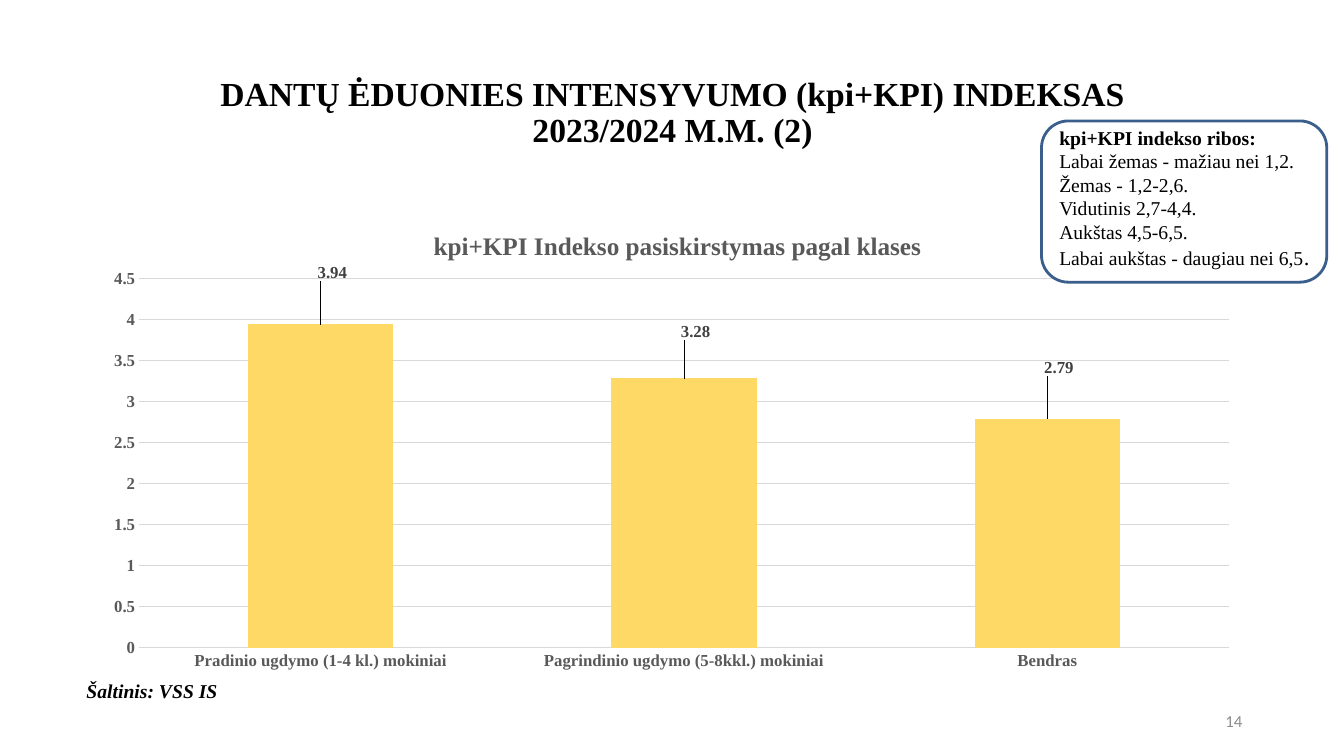
from dataclasses import dataclass

from lxml import etree
from pptx import Presentation
from pptx import slide as s
from pptx import util as u
from pptx.chart import chart as ch
from pptx.chart import data as cd
from pptx.dml.color import RGBColor
from pptx.enum import chart as ce
from pptx.enum import shapes, text
from pptx.oxml.ns import qn
from pptx.text import text as tt


@dataclass(frozen=True)
class Theme:
    serif: str = "Times New Roman"
    sans: str = "Calibri"
    black: str = "000000"
    white: str = "FFFFFF"
    axis: str = "595959"
    label: str = "404040"
    grid: str = "D9D9D9"
    bar: str = "FFD966"
    outline: str = "3A5F8C"
    number: str = "8C8C8C"
    heading_size: int = 24
    chart_title_size: int = 18
    stop_size: int = 16
    body_size: int = 14
    small_size: int = 12


THEME = Theme()


@dataclass(frozen=True)
class Span:
    words: str
    size: int = THEME.body_size
    bold: bool = False
    italic: bool = False
    color: str = THEME.black
    face: str = THEME.serif


@dataclass(frozen=True)
class Box:
    left: float
    top: float
    width: float
    height: float

    def lengths(self) -> list[int]:
        return [u.Inches(n) for n in (self.left, self.top, self.width, self.height)]


@dataclass(frozen=True)
class ClassGroup:
    name: str
    index: float
    label_shift: tuple[float, float]


GROUPS = [
    ClassGroup("Pradinio ugdymo (1-4 kl.) mokiniai", 3.94, (0.01, -0.08)),
    ClassGroup("Pagrindinio ugdymo (5-8kkl.) mokiniai", 3.28, (0.01, -0.07)),
    ClassGroup("Bendras", 2.79, (0.01, -0.08)),
]

LIMITS = [
    [Span("kpi+KPI indekso ribos:", bold=True)],
    [Span("Labai žemas - mažiau nei 1,2.")],
    [Span("Žemas - 1,2-2,6.")],
    [Span("Vidutinis 2,7-4,4.")],
    [Span("Aukštas 4,5-6,5.")],
    [Span("Labai aukštas - daugiau nei 6,5"), Span(".", THEME.stop_size)],
]


def style_font(font: tt.Font, span: Span) -> None:
    font.name, font.size = span.face, u.Pt(span.size)
    font.bold, font.italic = span.bold, span.italic
    font.color.rgb = RGBColor.from_string(span.color)


def write(frame: tt.TextFrame, paras: list[list[Span]], align: text.PP_ALIGN,
          anchor: text.MSO_ANCHOR = text.MSO_ANCHOR.MIDDLE) -> None:
    frame.word_wrap = True
    frame.vertical_anchor = anchor
    for number, spans in enumerate(paras):
        para = frame.add_paragraph() if number else frame.paragraphs[0]
        para.alignment = align
        for span in spans:
            run = para.add_run()
            run.text = span.words
            style_font(run.font, span)


def add_text(page: s.Slide, box: Box, paras: list[list[Span]], align: text.PP_ALIGN,
             anchor: text.MSO_ANCHOR = text.MSO_ANCHOR.MIDDLE) -> tt.TextFrame:
    frame = page.shapes.add_textbox(*box.lengths()).text_frame
    write(frame, paras, align, anchor)
    return frame


def manual_layout(**values: str | float) -> etree._Element:
    """Build a c:layout element; values follow the schema order."""
    layout = etree.Element(qn("c:layout"))
    manual = etree.SubElement(layout, qn("c:manualLayout"))
    for name, value in values.items():
        etree.SubElement(manual, qn(f"c:{name}")).set("val", str(value))
    return layout


def place_plot(chart: ch.Chart) -> None:
    area = chart._chartSpace.chart.plotArea
    for old in area.findall(qn("c:layout")):
        area.remove(old)
    area.insert(0, manual_layout(layoutTarget="inner", xMode="edge", yMode="edge",
                                 x=0.04, y=0.16, w=0.94, h=0.77))


def add_title(chart: ch.Chart) -> None:
    run = chart.chart_title.text_frame.paragraphs[0].add_run()
    run.text = "kpi+KPI Indekso pasiskirstymas pagal klases"
    style_font(run.font, Span("", THEME.chart_title_size, True, color=THEME.axis))
    chart.chart_title.include_in_layout = False
    title = chart._chartSpace.chart.find(qn("c:title"))
    for old in title.findall(qn("c:layout")):
        title.remove(old)
    title.find(qn("c:tx")).addnext(
        manual_layout(xMode="edge", yMode="edge", x=0.29, y=0.05))


def style_axes(chart: ch.Chart) -> None:
    for axis in (chart.category_axis, chart.value_axis):
        axis.major_tick_mark = axis.minor_tick_mark = ce.XL_TICK_MARK.NONE
        axis.format.line.fill.background()
        style_font(axis.tick_labels.font,
                   Span("", THEME.small_size, True, color=THEME.axis))
    scale = chart.value_axis
    scale.minimum_scale, scale.maximum_scale, scale.major_unit = 0, 4.5, 0.5
    scale.has_major_gridlines = True
    grid = scale.major_gridlines.format.line
    grid.width = u.Pt(0.75)
    grid.color.rgb = RGBColor.from_string(THEME.grid)


def style_bars(chart: ch.Chart) -> None:
    plot = chart.plots[0]
    plot.gap_width, plot.vary_by_categories = 150, False
    bars = plot.series[0]
    bars.format.fill.solid()
    bars.format.fill.fore_color.rgb = RGBColor.from_string(THEME.bar)
    look = Span("", THEME.small_size, True, color=THEME.label)
    bars.data_labels.show_value = True
    style_font(bars.data_labels.font, look)
    for number in range(len(GROUPS)):
        label = bars.points[number].data_label
        style_font(label.font, look)
        label.position = ce.XL_LABEL_POSITION.OUTSIDE_END
    for group, node in zip(GROUPS, chart._chartSpace.xpath(".//c:dLbl")):
        x, y = group.label_shift
        node.find(qn("c:idx")).addnext(manual_layout(x=x, y=y))


def add_index_chart(page: s.Slide, box: Box) -> None:
    data = cd.CategoryChartData()
    data.categories = [group.name for group in GROUPS]
    data.add_series("Series 1", [group.index for group in GROUPS])
    chart = page.shapes.add_chart(
        ce.XL_CHART_TYPE.COLUMN_CLUSTERED, *box.lengths(), data).chart
    chart.has_legend = False
    style_font(chart.font, Span("", 10, face=THEME.sans))
    add_title(chart)
    style_axes(chart)
    style_bars(chart)
    place_plot(chart)


def add_limits(page: s.Slide, box: Box) -> None:
    card = page.shapes.add_shape(shapes.MSO_SHAPE.ROUNDED_RECTANGLE, *box.lengths())
    card.shadow.inherit = False
    card.fill.solid()
    card.fill.fore_color.rgb = RGBColor.from_string(THEME.white)
    card.line.color.rgb = RGBColor.from_string(THEME.outline)
    card.line.width = u.Pt(2)
    card.text_frame.margin_right = u.Inches(0.05)
    card.text_frame.margin_bottom = u.Inches(0.12)
    write(card.text_frame, LIMITS, text.PP_ALIGN.LEFT)


def main() -> None:
    deck = Presentation()
    deck.slide_width, deck.slide_height = u.Inches(13.33), u.Inches(7.5)
    page = deck.slides.add_slide(deck.slide_layouts[6])
    heading = [[Span(words, THEME.heading_size, True)] for words in (
        "DANTŲ ĖDUONIES INTENSYVUMO (kpi+KPI) INDEKSAS", "2023/2024 M.M. (2)")]
    frame = add_text(page, Box(0.92, 0.4, 11.5, 1.45), heading, text.PP_ALIGN.CENTER)
    for para in frame.paragraphs:
        para.line_spacing = 0.9
    add_index_chart(page, Box(0.92, 2, 11.5, 4.76))
    add_limits(page, Box(10.33, 1.2, 2.83, 1.6))
    add_text(page, Box(0.76, 6.69, 1.6, 0.34),
             [[Span("Šaltinis: VSS IS", bold=True, italic=True)]],
             text.PP_ALIGN.LEFT, text.MSO_ANCHOR.TOP)
    add_text(page, Box(9.42, 6.95, 3, 0.4),
             [[Span("14", THEME.small_size, color=THEME.number, face=THEME.sans)]],
             text.PP_ALIGN.RIGHT)
    deck.save("out.pptx")


if __name__ == "__main__":
    main()
